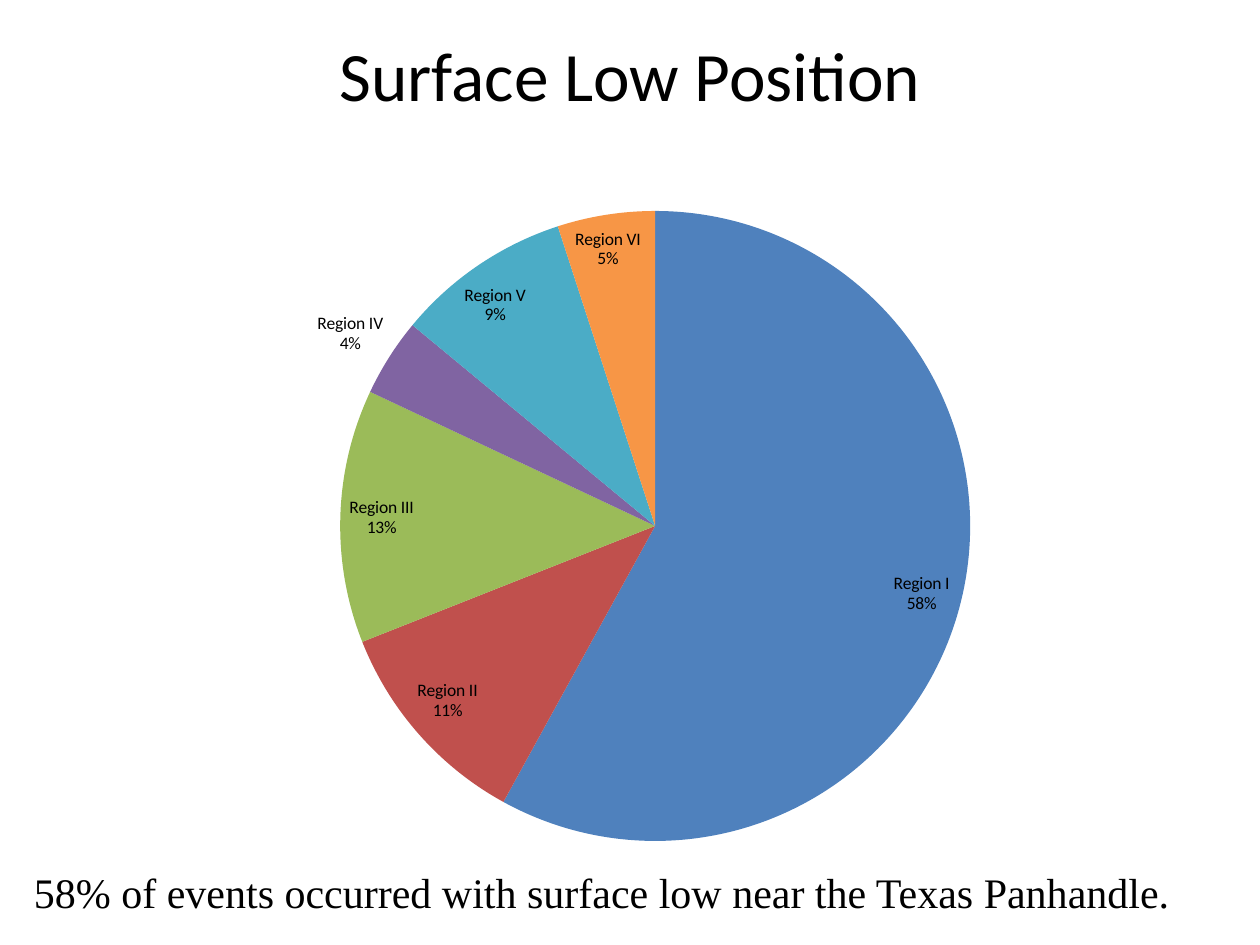
from lxml import etree
from pptx import Presentation
from pptx.chart.data import CategoryChartData
from pptx.dml.color import RGBColor
from pptx.enum.chart import XL_CHART_TYPE, XL_LABEL_POSITION
from pptx.enum.text import MSO_ANCHOR, MSO_AUTO_SIZE, PP_ALIGN
from pptx.oxml import parse_xml
from pptx.oxml.ns import nsdecls
from pptx.util import Inches, Pt

PIE = XL_CHART_TYPE.PIE
BEST_FIT = XL_LABEL_POSITION.BEST_FIT
MIDDLE = MSO_ANCHOR.MIDDLE
TOP = MSO_ANCHOR.TOP
GROW = MSO_AUTO_SIZE.SHAPE_TO_FIT_TEXT
FIXED = MSO_AUTO_SIZE.NONE
CENTER = PP_ALIGN.CENTER

BLACK = RGBColor(0x00, 0x00, 0x00)
BLUE = RGBColor(0x4F, 0x81, 0xBD)
RED = RGBColor(0xC0, 0x50, 0x4D)
GREEN = RGBColor(0x9B, 0xBB, 0x59)
PURPLE = RGBColor(0x80, 0x64, 0xA2)
TEAL = RGBColor(0x4B, 0xAC, 0xC6)
ORANGE = RGBColor(0xF7, 0x96, 0x46)

REGIONS = [
    ("Region I", 58, BLUE),
    ("Region II", 11, RED),
    ("Region III", 13, GREEN),
    ("Region IV", 4, PURPLE),
    ("Region V", 9, TEAL),
    ("Region VI", 5, ORANGE),
]
PLOT_AREA = {"x": 0.27, "y": 0.08, "w": 0.5, "h": 0.9}


class SlideBuilder:
    """Holds the text style and the current slide, and adds elements to it."""

    heading_font = "Calibri"
    body_font = "Times New Roman"
    color = BLACK

    def __init__(self, page):
        self.page = page

    def style(self, font, name, size):
        font.name = name
        font.size = Pt(size)
        font.color.rgb = self.color

    def text(self, left, top, width, height, words, name, size, anchor):
        box = self.page.shapes.add_textbox(
            Inches(left), Inches(top), Inches(width), Inches(height)
        )
        frame = box.text_frame
        frame.vertical_anchor = anchor
        frame.margin_left = frame.margin_right = 0
        para = frame.paragraphs[0]
        para.text = words
        para.alignment = CENTER
        self.style(para.font, name, size)
        return frame

    def title(self, words):
        frame = self.text(0.5, 0, 9, 1.17, words, self.heading_font, 39.6, MIDDLE)
        frame.word_wrap = True
        frame.auto_size = FIXED

    def caption(self, words):
        frame = self.text(0.17, 6.83, 9.21, 0.5, words, self.body_font, 24, TOP)
        frame.word_wrap = False
        frame.auto_size = GROW

    def pie(self, left, top, width, height, slices):
        names, values, colors = zip(*slices)
        data = CategoryChartData()
        data.categories = names
        data.add_series("Series 1", values)
        chart = self.page.shapes.add_chart(
            PIE, Inches(left), Inches(top), Inches(width), Inches(height), data
        ).chart
        chart.has_title = False
        chart.has_legend = False
        self.style(chart.font, self.heading_font, 10)
        plot = chart.plots[0]
        plot.vary_by_categories = True
        for index, color in enumerate(colors):
            fill = plot.series[0].points[index].format.fill
            fill.solid()
            fill.fore_color.rgb = color
        labels = plot.series[0].data_labels
        labels.show_category_name = True
        labels.show_percentage = True
        labels.show_value = False
        labels.number_format = "0%"
        labels.number_format_is_linked = False
        labels.position = BEST_FIT
        self.style(labels.font, self.heading_font, 10)
        self.place_plot(chart)

    def place_plot(self, chart):
        area = chart.element.chart.plotArea
        for layout in area.findall("{*}layout"):
            area.remove(layout)
        layout = parse_xml(f"<c:layout {nsdecls('c')}><c:manualLayout/></c:layout>")
        settings = {"layoutTarget": "inner", "xMode": "edge", "yMode": "edge"}
        namespace = etree.QName(layout).namespace
        for name, value in {**settings, **PLOT_AREA}.items():
            etree.SubElement(layout[0], f"{{{namespace}}}{name}", val=str(value))
        area.insert(0, layout)


def main():
    deck = Presentation()
    deck.slide_width = Inches(10)
    deck.slide_height = Inches(7.5)
    builder = SlideBuilder(deck.slides.add_slide(deck.slide_layouts[6]))
    builder.title("Surface Low Position")
    builder.pie(0, 1.17, 10, 5.67, REGIONS)
    builder.caption("58% of events occurred with surface low near the Texas Panhandle.")
    deck.save("out.pptx")


if __name__ == "__main__":
    main()
